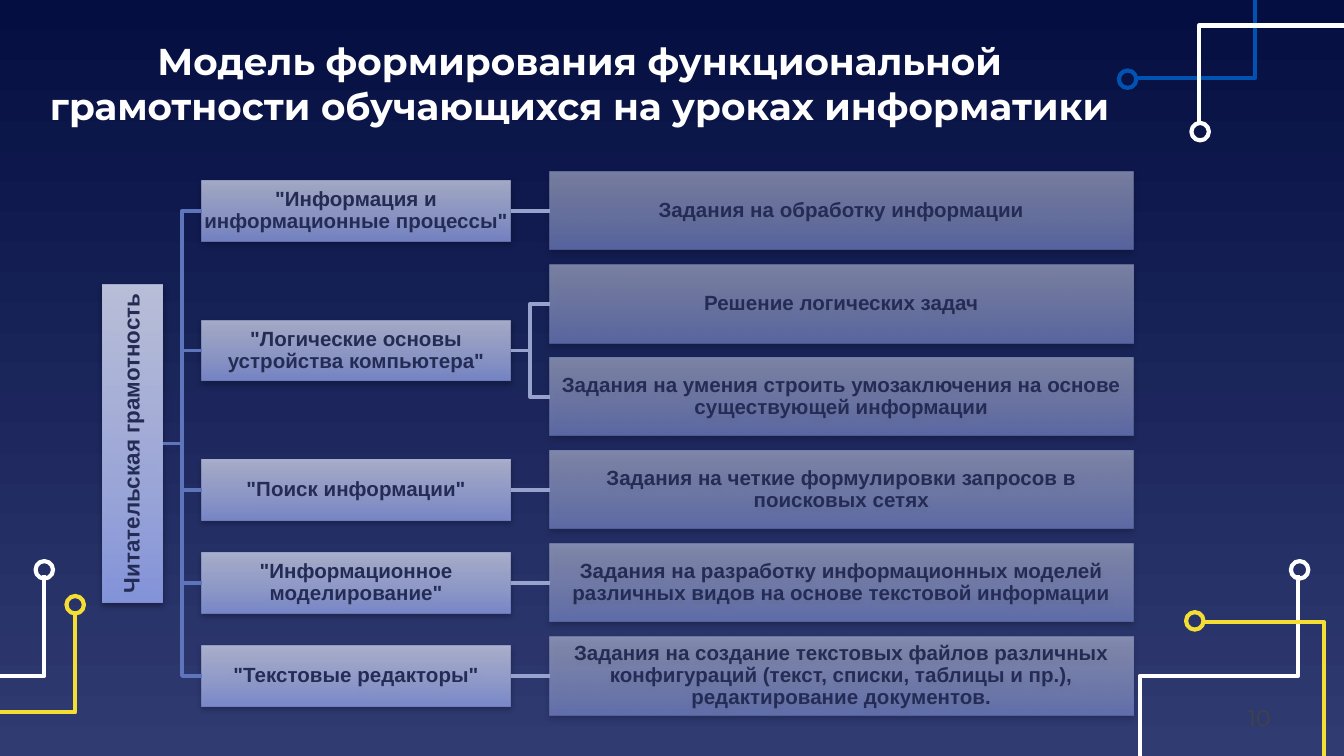
from lxml import etree
from pptx import Presentation, util as u
from pptx.dml.color import RGBColor
from pptx.enum import shapes, text
from pptx.oxml import parse_xml
from pptx.oxml.ns import nsdecls, qn

TITLE = "Модель формирования функциональной грамотности обучающихся на уроках информатики"
ROOT = "Читательская грамотность"
BRANCHES = [
    ('"Информация и информационные процессы"', ["Задания на обработку информации"]),
    ('"Логические основы устройства компьютера"', [
        "Решение логических задач",
        "Задания на умения строить умозаключения на основе существующей информации"]),
    ('"Поиск информации"', ["Задания на четкие формулировки запросов в поисковых сетях"]),
    ('"Информационное моделирование"', [
        "Задания на разработку информационных моделей различных видов на основе текстовой информации"]),
    ('"Текстовые редакторы"', [
        "Задания на создание текстовых файлов различных конфигураций "
        "(текст, списки, таблицы и пр.), редактирование документов."]),
]
PAGE = "10"

WHITE = RGBColor(0xFF, 0xFF, 0xFF)
BLUE = RGBColor(0x01, 0x52, 0xB1)
YELLOW = RGBColor(0xF5, 0xDE, 0x34)
NAVY = RGBColor(0x24, 0x2C, 0x56)
GREY = RGBColor(0x43, 0x43, 0x43)
TRUNK = RGBColor(0x5E, 0x75, 0xBB)
TWIG = RGBColor(0x97, 0xA2, 0xCD)
SKY = [RGBColor(0x04, 0x0E, 0x41), RGBColor(0x30, 0x3B, 0x72)]
GLASS = [(0, RGBColor(0x9D, 0xAF, 0xFC)), (35, RGBColor(0xBB, 0xC7, 0xFC)),
         (100, RGBColor(0xE4, 0xE9, 0xFF))]

WIDTH = 10
HEIGHT = WIDTH * 9 / 16
RING = 0.13
CIRCUITS = [
    (WHITE, (9.67, 4.24), [(9.66, 4.28), (9.66, 5.03), (8.48, 5.03), (8.48, HEIGHT)]),
    (BLUE, (8.39, 0.59), [(8.45, 0.58), (9.34, 0.58), (9.34, 0)]),
    (WHITE, (8.93, 0.98), [(8.92, 0.93), (8.92, 0.19), (WIDTH, 0.19)]),
    (YELLOW, (8.89, 4.62), [(8.94, 4.63), (9.85, 4.63), (9.85, HEIGHT)]),
    (WHITE, (0.33, 4.24), [(0.33, 4.28), (0.33, 5.03), (0, 5.03)]),
    (YELLOW, (0.56, 4.5), [(0.56, 4.55), (0.56, 5.3), (0, 5.3)]),
]

FIRST_ROW, LAST_ROW = 1.57, 5.03
ROOT_BOX = dict(left=0.76, width=0.45, height=2.37, opacity=80, size=12)
TOPIC_BOX = dict(left=1.5, width=2.3, height=0.45, opacity=70, size=11)
TASK_BOX = dict(left=4.09, width=4.34, height=0.58, opacity=50, size=11)
RIGHT_SIDE, LEFT_SIDE = 3, 1

deck = Presentation()
deck.slide_width, deck.slide_height = u.Inches(WIDTH), u.Inches(HEIGHT)
slide = deck.slides.add_slide(deck.slide_layouts[6])
sky = slide.background.fill
sky.gradient()
sky.gradient_angle = 270
for stop, color in zip(sky.gradient_stops, SKY):
    stop.color.rgb = color


def write(holder, words, inset, line_spacing, color, **font):
    frame = holder.text_frame
    frame.word_wrap = True
    frame.vertical_anchor = text.MSO_ANCHOR.MIDDLE
    for side in ("left", "right", "top", "bottom"):
        setattr(frame, f"margin_{side}", u.Inches(inset))
    paragraph = frame.paragraphs[0]
    paragraph.alignment = text.PP_ALIGN.CENTER
    paragraph.line_spacing = line_spacing
    run = paragraph.add_run()
    run.text = words
    run.font.color.rgb = color
    for key, value in font.items():
        setattr(run.font, key, value)


def outline(part, color, points):
    part.line.color.rgb = color
    part.line.width = u.Pt(points)


def circuit(color, center, track):
    corners = [(u.Inches(x), u.Inches(y)) for x, y in track]
    builder = slide.shapes.build_freeform(*corners[0])
    builder.add_line_segments(corners[1:], close=False)
    ring_place = [u.Inches(value - RING / 2) for value in center]
    ring = slide.shapes.add_shape(
        shapes.MSO_SHAPE.OVAL, *ring_place, u.Inches(RING), u.Inches(RING))
    for part in (builder.convert_to_shape(), ring):
        part.fill.background()
        part.shadow.inherit = False
        outline(part, color, 2.25)


def box(words, middle, left, width, height, opacity, size):
    place = [u.Inches(v) for v in (left, middle - height / 2, width, height)]
    panel = slide.shapes.add_shape(shapes.MSO_SHAPE.RECTANGLE, *place)
    stops = "".join(
        f'<a:gs pos="{at * 1000}"><a:srgbClr val="{color}">'
        f'<a:alpha val="{opacity * 1000}"/></a:srgbClr></a:gs>' for at, color in GLASS)
    properties = panel._element.spPr
    properties.insert(2, parse_xml(
        f'<a:gradFill {nsdecls("a")} rotWithShape="1"><a:gsLst>{stops}</a:gsLst>'
        '<a:lin ang="16200000" scaled="0"/></a:gradFill>'))
    panel.line.fill.background()
    properties.append(parse_xml(
        f'<a:effectLst {nsdecls("a")}><a:outerShdw blurRad="{u.Pt(3.1)}" dist="{u.Pt(1.6)}" '
        'dir="5400000" rotWithShape="0"><a:srgbClr val="000000"><a:alpha val="38000"/>'
        '</a:srgbClr></a:outerShdw></a:effectLst>'))
    write(panel, words, 0.01, 0.9, NAVY, size=u.Pt(size), name="Arial", bold=True)
    return panel


def link(parent, child, color, straight):
    kind = shapes.MSO_CONNECTOR.STRAIGHT if straight else shapes.MSO_CONNECTOR.ELBOW
    branch = slide.shapes.add_connector(kind, 0, 0, 0, 0)
    branch.begin_connect(parent, RIGHT_SIDE)
    branch.end_connect(child, LEFT_SIDE)
    outline(branch, color, 2)
    etree.SubElement(branch._element.spPr, qn("a:effectLst"))


def label(words, left, top, width, height, **style):
    place = [u.Inches(v) for v in (left, top, width, height)]
    write(slide.shapes.add_textbox(*place), words, line_spacing=1, name="Montserrat", **style)


for color, center, track in CIRCUITS:
    circuit(color, center, track)

label(TITLE, 0.1, 0.36, 8.43, 0.52, inset=0.1, color=WHITE, size=u.Pt(20), bold=True)
label(PAGE, 9.12, 5.2, 0.5, 0.28, inset=0, color=GREY, size=u.Pt(12))

row_count = sum(len(tasks) for _, tasks in BRANCHES)
row_step = (LAST_ROW - FIRST_ROW) / (row_count - 1)
root = box(ROOT, (FIRST_ROW + LAST_ROW) / 2, **ROOT_BOX)
root.text_frame._txBody.bodyPr.set("vert", "vert270")

row = 0
for topic, tasks in BRANCHES:
    first = FIRST_ROW + row * row_step
    topic_box = box(topic, first + row_step * (len(tasks) - 1) / 2, **TOPIC_BOX)
    link(root, topic_box, TRUNK, straight=False)
    for index, task in enumerate(tasks):
        task_box = box(task, first + index * row_step, **TASK_BOX)
        link(topic_box, task_box, TWIG, straight=len(tasks) == 1)
    row += len(tasks)

deck.save("out.pptx")
